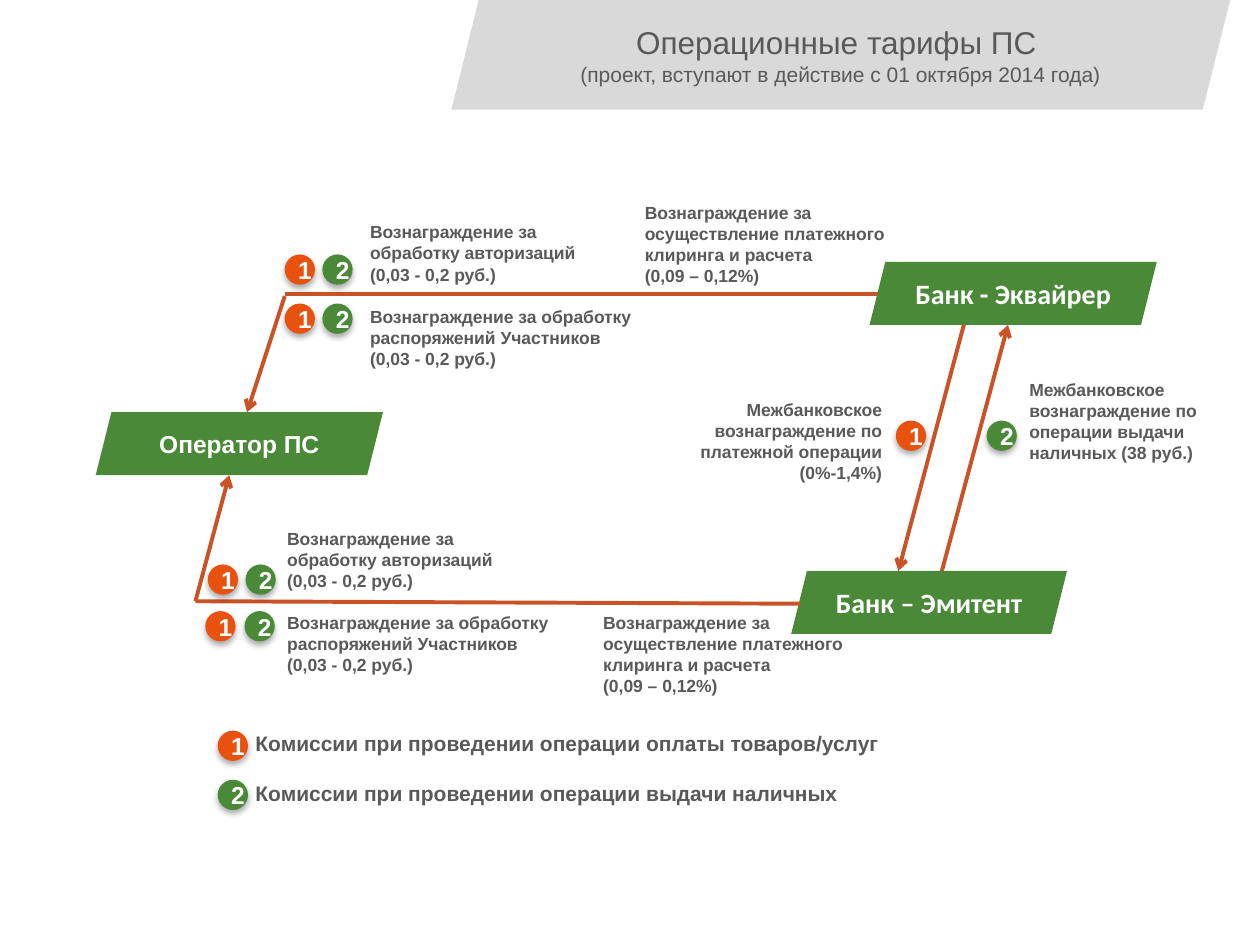
from lxml import etree
from pptx import Presentation
from pptx.dml.color import RGBColor
from pptx.enum.shapes import MSO_CONNECTOR, MSO_SHAPE
from pptx.enum.text import MSO_ANCHOR, MSO_AUTO_SIZE, PP_ALIGN
from pptx.oxml.ns import qn
from pptx.util import Cm, Pt

SLANT, OVAL = MSO_SHAPE.PARALLELOGRAM, MSO_SHAPE.OVAL
STRAIGHT = MSO_CONNECTOR.STRAIGHT
MIDDLE, GROW = MSO_ANCHOR.MIDDLE, MSO_AUTO_SIZE.SHAPE_TO_FIT_TEXT
LEFT, CENTER, RIGHT = PP_ALIGN.LEFT, PP_ALIGN.CENTER, PP_ALIGN.RIGHT

GREEN, ORANGE, RUST = "4A8938", "E9510E", "CA5227"
GRAY, SILVER, WHITE = "595959", "D9D9D9", "FFFFFF"


def color(target, code):
    """Set a hex colour on a font, line or fill."""
    if hasattr(target, "solid"):
        target.solid()
        target.fore_color.rgb = RGBColor.from_string(code)
    else:
        target.color.rgb = RGBColor.from_string(code)


def write(frame, text, size=10, face="Arial", ink=GRAY, bold=True, align=LEFT, gaps=None):
    """Fill a frame, one paragraph per line; sizes may differ by line,
    gaps maps a line number to its space before."""
    for i, line in enumerate(text.split("\n")):
        para = frame.paragraphs[0] if i == 0 else frame.add_paragraph()
        para.alignment = align
        if gaps and i in gaps:
            para.space_before = Pt(gaps[i])
        run = para.add_run()
        run.text = line
        font = run.font
        font.size = Pt(size[i] if isinstance(size, tuple) else size)
        font.name, font.bold = face, bold
        color(font, ink)


class Scheme:
    width = 2.25   # line weight, pt
    dot = 0.61     # badge diameter, cm
    high = 1.27    # party height, cm

    def __init__(self, slide):
        self.shapes = slide.shapes

    def shape(self, kind, x, y, w, h, fill):
        item = self.shapes.add_shape(kind, Cm(x), Cm(y), Cm(w), Cm(h))
        item.shadow.inherit = False
        color(item.fill, fill)
        item.line.fill.background()
        item.text_frame.vertical_anchor = MIDDLE
        return item

    def title(self, text):
        item = self.shape(SLANT, 9.1, 0, 15.7, 2.21, SILVER)
        write(item.text_frame, text, size=(18, 12), bold=False, align=CENTER)

    def party(self, text, x, y, w, **style):
        item = self.shape(SLANT, x, y, w, self.high, GREEN)
        write(item.text_frame, text, ink=WHITE, align=CENTER, **style)

    def badge(self, num, x, y):
        item = self.shape(OVAL, x, y, self.dot, self.dot, ORANGE if num == 1 else GREEN)
        write(item.text_frame, str(num), size=14, ink=WHITE, align=CENTER)
        effects = item._element.spPr.find(qn("a:effectLst"))
        cast = etree.SubElement(effects, qn("a:outerShdw"), blurRad=str(Pt(3.5)),
                                dist=str(Pt(2.2)), dir="5400000", rotWithShape="0")
        tone = etree.SubElement(cast, qn("a:srgbClr"), val="000000")
        etree.SubElement(tone, qn("a:alpha"), val="32000")

    def note(self, text, x, y, w, h, wrap=True, **style):
        frame = self.shapes.add_textbox(Cm(x), Cm(y), Cm(w), Cm(h)).text_frame
        frame.word_wrap, frame.auto_size = wrap, GROW
        write(frame, text, **style)

    def line(self, x1, y1, x2, y2, arrow=True):
        item = self.shapes.add_connector(STRAIGHT, Cm(x1), Cm(y1), Cm(x2), Cm(y2))
        color(item.line, RUST)
        item.line.width = Pt(self.width)
        if arrow:
            etree.SubElement(item.line._get_or_add_ln(), qn("a:tailEnd"), type="arrow")
        etree.SubElement(item._element.spPr, qn("a:effectLst"))


def main():
    deck = Presentation()
    deck.slide_width, deck.slide_height = Cm(25.4), Cm(19.05)
    art = Scheme(deck.slides.add_slide(deck.slide_layouts[6]))

    # Heading
    art.title("Операционные тарифы ПС \n(проект, вступают в действие с 01 октября 2014 года)")

    # Parties and flows, the acquirer above its lines
    art.line(18.92, 11.76, 20.32, 6.55)
    art.party("Оператор ПС", 1.93, 8.31, 5.79, size=14)
    art.party("Банк – Эмитент", 15.95, 11.51, 5.56, size=16, face="Calibri")
    art.line(3.94, 12.12, 4.62, 9.58)
    art.line(5.74, 5.97, 4.98, 8.31)
    art.line(19.53, 6.17, 18.11, 11.51)
    art.line(18.49, 5.92, 5.74, 5.92, arrow=False)
    art.line(16.13, 12.17, 3.94, 12.12, arrow=False)
    art.party("Банк - Эквайрер", 17.53, 5.28, 5.79, size=16, face="Calibri")

    # Fees between the banks
    art.note("Межбанковское вознаграждение по платежной операции (0%-1,4%)",
             13.79, 7.92, 4.24, 1.96, align=RIGHT)
    art.note("Межбанковское вознаграждение по операции выдачи наличных (38 руб.)",
             20.5, 7.52, 4.8, 1.96)

    # Fees to the operator
    clearing = "Вознаграждение за осуществление платежного клиринга и расчета\n(0,09 – 0,12%)"
    service = ("Вознаграждение за\nобработку авторизаций\n(0,03 - 0,2 руб.)\n"
               "Вознаграждение за обработку распоряжений Участников\n(0,03 - 0,2 руб.)")
    for x, y, w in (12.75, 3.94, 5.97), (11.91, 12.22, 5.44):
        art.note(clearing, x, y, w, 1.96)
    for x, y, w in (7.21, 4.34, 6.5), (5.54, 10.52, 5.79):
        art.note(service, x, y, w, 3.25, gaps={3: 12})

    # Legend
    art.note("Комиссии при проведении операции оплаты товаров/услуг\n"
             "Комиссии при проведении операции выдачи наличных",
             4.9, 14.6, 13.21, 2.31, wrap=False, size=12, gaps={1: 14.4})

    # Badges: places of 1 and 2 in each pair
    for x1, y1, x2, y2 in (
        (5.74, 5.13, 6.5, 5.13), (5.74, 6.12, 6.5, 6.12),
        (4.19, 11.38, 4.95, 11.38), (4.14, 12.32, 4.93, 12.32),
        (18.06, 8.48, 19.89, 8.48), (4.39, 14.73, 4.39, 15.72),
    ):
        art.badge(1, x1, y1)
        art.badge(2, x2, y2)

    deck.save("out.pptx")


if __name__ == "__main__":
    main()
